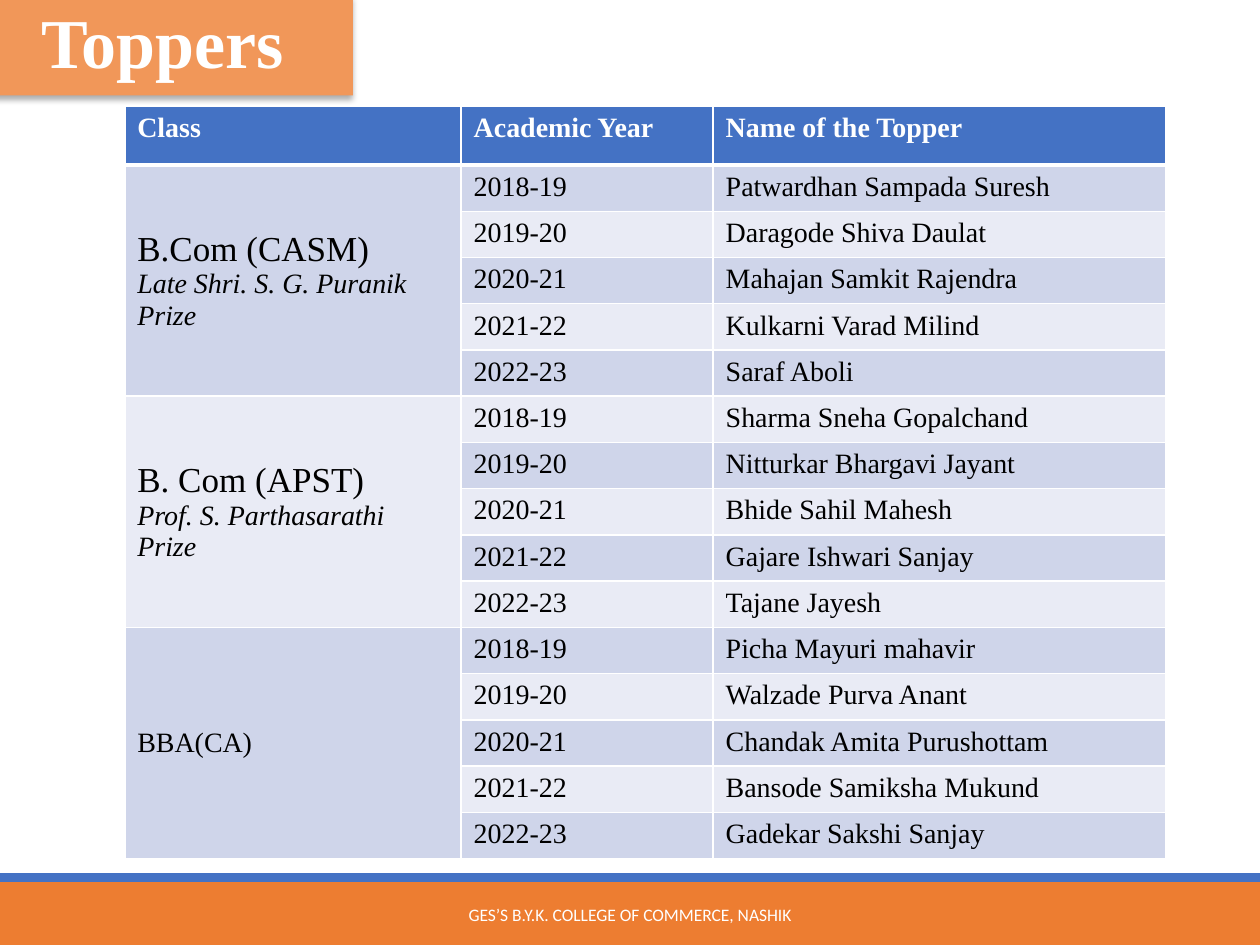
import lxml.etree
import pptx
import pptx.dml.color
import pptx.enum.shapes
import pptx.enum.text
import pptx.oxml
import pptx.oxml.ns
import pptx.util

WIDTH, HEIGHT = 10, 7.5
SERIF = "Times New Roman"
COLORS = {
    "white": "FFFFFF", "black": "000000", "blue": "4472C4",
    "orange": "ED7D31", "tab": "F19759", "dark_band": "CFD5EA",
    "light_band": "E9EBF5",
}
COLUMNS = {"Class": 2.67, "Academic Year": 2, "Name of the Topper": 3.59}
HEADER_HEIGHT, ROWS_HEIGHT = 0.47, 5.46
YEARS = ["2018-19", "2019-20", "2020-21", "2021-22", "2022-23"]
CLASSES = [
    ([("B.Com (CASM)", 20, False), ("Late Shri. S. G. Puranik Prize", 16, True)],
     ["Patwardhan Sampada Suresh", "Daragode Shiva Daulat", "Mahajan Samkit Rajendra",
      "Kulkarni Varad Milind", "Saraf Aboli"]),
    ([("B. Com (APST)", 20, False), ("Prof. S. Parthasarathi Prize", 16, True)],
     ["Sharma Sneha Gopalchand", "Nitturkar Bhargavi Jayant", "Bhide Sahil Mahesh",
      "Gajare Ishwari Sanjay", "Tajane Jayesh"]),
    ([("BBA(CA)", 16, False)],
     ["Picha Mayuri mahavir", "Walzade Purva Anant", "Chandak Amita Purushottam",
      "Bansode Samiksha Mukund", "Gadekar Sakshi Sanjay"]),
]


def color(name):
    return pptx.dml.color.RGBColor.from_string(COLORS[name])


def box(left, top, width, height):
    return [pptx.util.Inches(share * side) for share, side in
            zip((left, top, width, height), (WIDTH, HEIGHT, WIDTH, HEIGHT))]


def paint(target, name):
    target.fill.solid()
    target.fill.fore_color.rgb = color(name)


def add_run(paragraph, text, size, ink, font=SERIF, bold=False, italic=False):
    run = paragraph.add_run()
    run.text = text
    run.font.name = font
    run.font.size = pptx.util.Pt(size)
    run.font.bold = bold
    run.font.italic = italic
    run.font.color.rgb = color(ink)


def add_title(slide):
    title = slide.shapes.title
    title.left, title.top, title.width, title.height = box(-0.048, -0.004, 0.328, 0.105)
    namespace = pptx.oxml.ns.nsdecls("a")
    title._element.spPr.append(pptx.oxml.parse_xml(
        f'<a:prstGeom {namespace} prst="roundRect"><a:avLst/></a:prstGeom>'))
    paint(title, "tab")
    title.line.fill.background()
    title._element.spPr.append(pptx.oxml.parse_xml(
        f'<a:effectLst {namespace}><a:outerShdw blurRad="44450" dist="27940" dir="5400000" '
        f'algn="ctr"><a:srgbClr val="{COLORS["black"]}"><a:alpha val="32000"/></a:srgbClr>'
        '</a:outerShdw></a:effectLst>'))
    frame = title.text_frame
    frame.auto_size = pptx.enum.text.MSO_AUTO_SIZE.NONE
    frame.vertical_anchor = pptx.enum.text.MSO_ANCHOR.MIDDLE
    frame.margin_left = pptx.util.Inches(0.81)
    heading = frame.paragraphs[0]
    heading.alignment = pptx.enum.text.PP_ALIGN.LEFT
    heading.line_spacing = 0.9
    add_run(heading, "Toppers", 40, "white", bold=True)


def add_band(slide, top, height, fill):
    band = slide.shapes.add_shape(
        pptx.enum.shapes.MSO_SHAPE.RECTANGLE, *box(0, top, 1, height))
    band.shadow.inherit = False
    paint(band, fill)
    band.line.fill.background()


def add_footer(slide):
    add_band(slide, 7 / HEIGHT, 0.5 / HEIGHT, "orange")
    add_band(slide, 6.93 / HEIGHT, 0.07 / HEIGHT, "blue")
    college = slide.shapes.add_textbox(*box(0.302, 7.06 / HEIGHT, 0.396, 0.4 / HEIGHT))
    frame = college.text_frame
    frame.word_wrap = True
    frame.vertical_anchor = pptx.enum.text.MSO_ANCHOR.MIDDLE
    frame.paragraphs[0].alignment = pptx.enum.text.PP_ALIGN.CENTER
    add_run(frame.paragraphs[0], "GES’S B.Y.K. COLLEGE OF COMMERCE, NASHIK", 10, "white", "Calibri")


def style_cell(cell, fill, top=1, bottom=1):
    properties = cell._tc.get_or_add_tcPr()
    for side, points in (("lnL", 1), ("lnR", 1), ("lnT", top), ("lnB", bottom)):
        border = lxml.etree.SubElement(
            properties, pptx.oxml.ns.qn(f"a:{side}"), w=str(pptx.util.Pt(points)))
        solid = lxml.etree.SubElement(border, pptx.oxml.ns.qn("a:solidFill"))
        lxml.etree.SubElement(solid, pptx.oxml.ns.qn("a:srgbClr"), val=COLORS["white"])
    paint(cell, fill)


def fill_class(table, first, lines, names):
    last = first + len(names) - 1
    for row, (year, name) in enumerate(zip(YEARS, names), first):
        for column, text in ((1, year), (2, name)):
            add_run(table.cell(row, column).text_frame.paragraphs[0], text, 16, "black")
    label = table.cell(first, 0)
    label.merge(table.cell(last, 0))
    label.vertical_anchor = pptx.enum.text.MSO_ANCHOR.MIDDLE
    frame = label.text_frame
    for index, (text, size, italic) in enumerate(lines):
        paragraph = frame.add_paragraph() if index else frame.paragraphs[0]
        add_run(paragraph, text, size, "black", italic=italic)


def add_toppers(slide):
    body_rows = len(CLASSES) * len(YEARS)
    table = slide.shapes.add_table(
        body_rows + 1, len(COLUMNS),
        *box(0.099, 0.84 / HEIGHT, sum(COLUMNS.values()) / WIDTH,
             (HEADER_HEIGHT + ROWS_HEIGHT) / HEIGHT)).table
    for index, (heading, width) in enumerate(COLUMNS.items()):
        table.columns[index].width = pptx.util.Inches(width)
        cell = table.cell(0, index)
        style_cell(cell, "blue", bottom=3)
        add_run(cell.text_frame.paragraphs[0], heading, 16, "white", bold=True)
    table.rows[0].height = pptx.util.Inches(HEADER_HEIGHT)
    for row in range(1, body_rows + 1):
        table.rows[row].height = pptx.util.Inches(ROWS_HEIGHT / body_rows)
        for column in range(len(COLUMNS)):
            band_row = (row - 1) // len(YEARS) + 1 if column == 0 else row
            style_cell(table.cell(row, column),
                       "dark_band" if band_row % 2 else "light_band", top=3 if row == 1 else 1)
    for index, (lines, names) in enumerate(CLASSES):
        fill_class(table, 1 + index * len(YEARS), lines, names)


def main():
    deck = pptx.Presentation()
    deck.slide_width = pptx.util.Inches(WIDTH)
    deck.slide_height = pptx.util.Inches(HEIGHT)
    slide = deck.slides.add_slide(deck.slide_layouts[5])
    add_footer(slide)
    add_toppers(slide)
    add_title(slide)
    deck.save("out.pptx")


if __name__ == "__main__":
    main()
